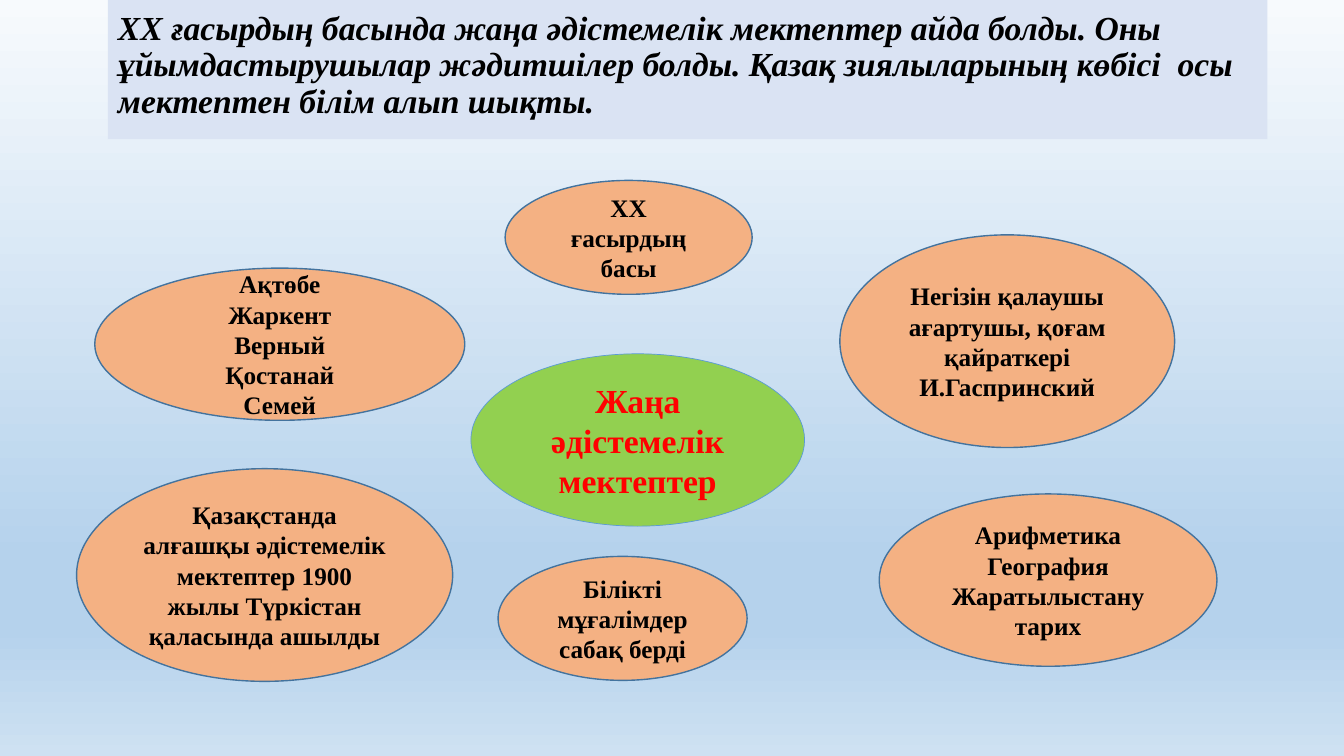
from lxml.etree import SubElement
from pptx import Presentation
from pptx.dml.color import RGBColor
from pptx.enum.shapes import MSO_SHAPE
from pptx.enum.text import MSO_ANCHOR, MSO_AUTO_SIZE, PP_ALIGN
from pptx.oxml.ns import qn
from pptx.util import Inches, Pt

FONT = "Times New Roman"
COLORS = {
    "title_fill": "DAE3F3",
    "center_fill": "92D050",
    "center_line": "5B9BD5",
    "center_text": "FF0000",
    "fact_fill": "F4B183",
    "fact_line": "43739E",
    "text": "000000",
}
BACKGROUND = [(0, "F7FAFD"), (74, "B5D2EC"), (83, "B5D2EC"), (100, "CEE1F2")]

TITLE = ("ХХ ғасырдың басында жаңа әдістемелік мектептер айда болды. "
         "Оны ұйымдастырушылар жәдитшілер болды. "
         "Қазақ зиялыларының көбісі  осы мектептен білім алып шықты.")

# Surrounding ellipses: left, top, width, height, text
FACTS = [
    (5.01, 1.79, 2.45, 1.13, "ХХ ғасырдың басы"),
    (4.94, 5.52, 2.47, 1.23, "Білікті мұғалімдер сабақ берді"),
    (8.33, 2.33, 3.32, 2.11,
     "Негізін қалаушы ағартушы, қоғам қайраткері И.Гаспринский"),
    (0.94, 2.66, 3.67, 1.51, "Ақтөбе\nЖаркент\nВерный\nҚостанай\nСемей"),
    (8.72, 4.9, 3.35, 1.71, "Арифметика\nГеография\nЖаратылыстану\nтарих"),
    (0.76, 4.65, 3.73, 2.11,
     "Қазақстанда алғашқы әдістемелік мектептер 1900 жылы Түркістан "
     "қаласында ашылды"),
]


class SlideBuilder:
    def __init__(self, prs):
        self.slide = prs.slides.add_slide(prs.slide_layouts[5])

    def color(self, name):
        return RGBColor.from_string(COLORS[name])

    def fill(self, sp, name):
        sp.fill.solid()
        sp.fill.fore_color.rgb = self.color(name)

    def set_text(self, sp, text, size, color, align, italic=None):
        tf = sp.text_frame
        tf.text = text
        tf.word_wrap = True
        tf.auto_size = MSO_AUTO_SIZE.NONE
        tf.vertical_anchor = MSO_ANCHOR.MIDDLE
        for p in tf.paragraphs:
            p.alignment = align
            for r in p.runs:
                r.font.name = FONT
                r.font.size = Pt(size)
                r.font.bold = True
                r.font.italic = italic
                r.font.color.rgb = self.color(color)

    def background(self, stops):
        fill = self.slide.background.fill
        fill.gradient()
        fill.gradient_angle = 270
        # Replace the two default stops
        stop_list = next(self.slide.element.iter(qn("a:gsLst")))
        for stop in list(stop_list):
            stop_list.remove(stop)
        for percent, rgb in stops:
            stop = SubElement(stop_list, qn("a:gs"), pos=str(percent * 1000))
            SubElement(stop, qn("a:srgbClr"), val=rgb)

    def title(self, left, top, width, height, text):
        sp = self.slide.shapes.title
        sp.left, sp.top = Inches(left), Inches(top)
        sp.width, sp.height = Inches(width), Inches(height)
        self.fill(sp, "title_fill")
        self.set_text(sp, text, 24, "text", PP_ALIGN.LEFT, italic=True)
        sp.text_frame.paragraphs[0].line_spacing = 0.9

    def ellipse(self, left, top, width, height, text, style="fact",
                text_color="text", size=18, line_width=1):
        sp = self.slide.shapes.add_shape(
            MSO_SHAPE.OVAL, Inches(left), Inches(top),
            Inches(width), Inches(height))
        sp.shadow.inherit = False
        self.fill(sp, f"{style}_fill")
        sp.line.color.rgb = self.color(f"{style}_line")
        sp.line.width = Pt(line_width)
        self.set_text(sp, text, size, text_color, PP_ALIGN.CENTER)


def main():
    prs = Presentation()
    prs.slide_width, prs.slide_height = Inches(13.33), Inches(7.5)
    s = SlideBuilder(prs)
    s.background(BACKGROUND)
    s.title(1.07, -0.07, 11.5, 1.45, TITLE)

    # Central topic
    s.ellipse(4.67, 3.51, 3.31, 1.71, "Жаңа әдістемелік мектептер",
              style="center", text_color="center_text", size=24,
              line_width=0.5)

    # Facts around the topic
    for fact in FACTS:
        s.ellipse(*fact)

    prs.save("out.pptx")


if __name__ == "__main__":
    main()
